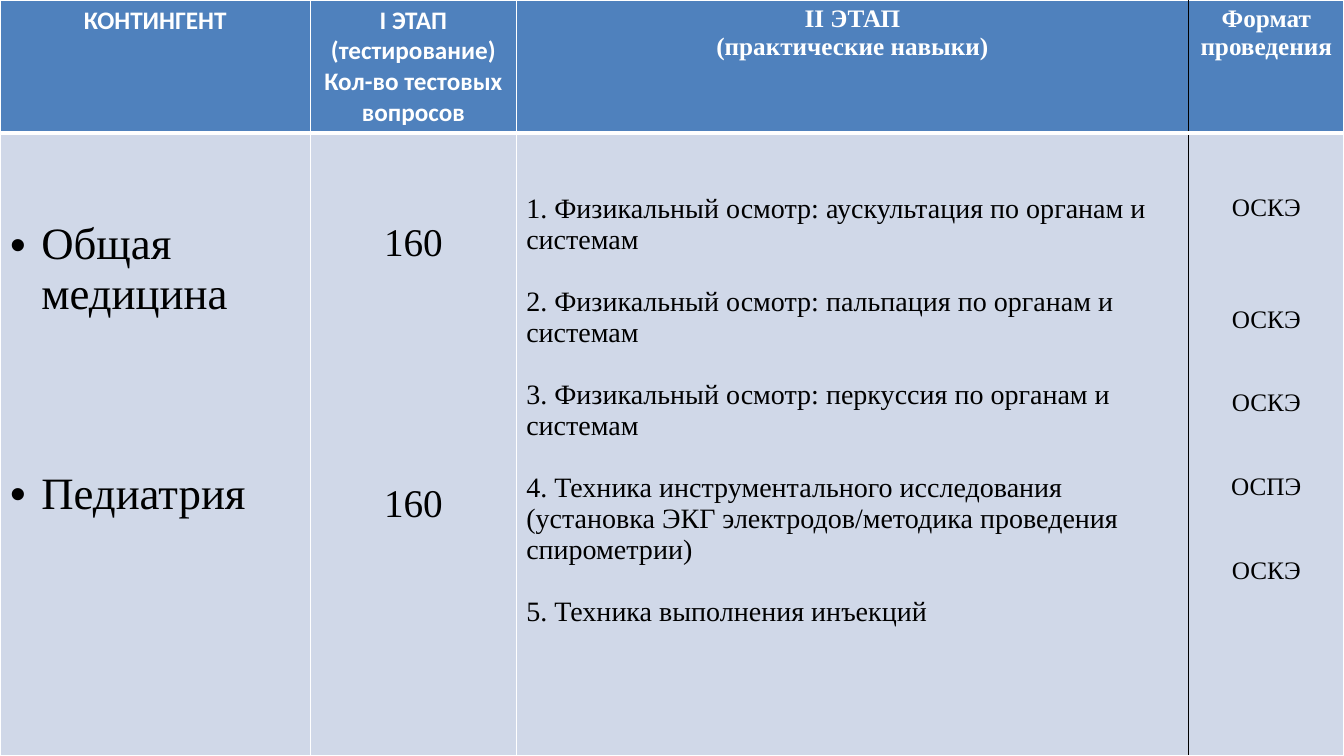
import pptx
import pptx.dml.color
import pptx.enum.text
import pptx.oxml
import pptx.oxml.ns
import pptx.util

Inches, Pt = pptx.util.Inches, pptx.util.Pt
RGBColor = pptx.dml.color.RGBColor
ALIGN = pptx.enum.text.PP_ALIGN

WHITE = RGBColor(0xFF, 0xFF, 0xFF)
BLACK = RGBColor(0x00, 0x00, 0x00)
BLUE = RGBColor(0x4F, 0x81, 0xBD)
PALE = RGBColor(0xD0, 0xD8, 0xE8)
SERIF, SANS = "Times New Roman", "Calibri"

# Content: header lines with their font
HEADERS = [
    (SANS, ["КОНТИНГЕНТ"]),
    (SANS, ["I ЭТАП", "(тестирование)", "Кол-во тестовых вопросов"]),
    (SERIF, ["II ЭТАП", "(практические навыки)"]),
    (SERIF, ["Формат проведения"]),
]

# Content: body columns; each line is (text, points of space before)
BODY = [
    {"size": 32, "top": 0.86, "align": ALIGN.LEFT, "bullet": True,
     "lines": [("Общая медицина", 0), ("Педиатрия", 107)]},
    {"size": 28, "top": 0.88, "align": ALIGN.CENTER, "bullet": False,
     "lines": [("160", 0), ("160", 155)]},
    {"size": 20, "top": 0.6, "align": ALIGN.LEFT, "bullet": False,
     "lines": [
         ("1. Физикальный осмотр: аускультация по органам и системам", 0),
         ("2. Физикальный осмотр: пальпация по органам и системам", 22),
         ("3. Физикальный осмотр: перкуссия по органам и системам", 22),
         ("4. Техника инструментального исследования (установка ЭКГ "
          "электродов/методика проведения спирометрии)", 22),
         ("5. Техника выполнения инъекций", 22)]},
    {"size": 18, "top": 0.6, "align": ALIGN.CENTER, "bullet": False,
     "lines": [("ОСКЭ", 0), ("ОСКЭ", 60), ("ОСКЭ", 40), ("ОСПЭ", 40), ("ОСКЭ", 40)]},
]

COLUMN_WIDTHS = [3.08, 2.04, 6.67, 1.54]
ROW_HEIGHTS = [1.32, 6.18]
BULLET_INDENT = 0.31


def add_border(cell, side, color, points):
    properties = cell._tc.get_or_add_tcPr()
    properties.append(pptx.oxml.parse_xml(
        f'<a:ln{side} {pptx.oxml.ns.nsdecls("a")} w="{Pt(points)}">'
        f'<a:solidFill><a:srgbClr val="{color}"/></a:solidFill></a:ln{side}>'))


def style_cell(cell, row, column, fill):
    # The line before the last column is black, the line under the header thick
    add_border(cell, "L", BLACK if column == 3 else WHITE, 1)
    add_border(cell, "R", BLACK if column == 2 else WHITE, 1)
    add_border(cell, "T", WHITE, 3 if row == 1 else 1)
    add_border(cell, "B", WHITE, 3 if row == 0 else 1)
    cell.fill.solid()
    cell.fill.fore_color.rgb = fill


def add_bullet(para):
    properties = para._p.get_or_add_pPr()
    properties.set("marL", str(Inches(BULLET_INDENT)))
    properties.set("indent", str(-Inches(BULLET_INDENT)))
    for markup in ('<a:buFont {} typeface="Arial"/>', '<a:buChar {} char="•"/>'):
        properties.append(pptx.oxml.parse_xml(markup.format(pptx.oxml.ns.nsdecls("a"))))


def write_lines(cell, lines, font, size, color, bold, align, bullet=False):
    frame = cell.text_frame
    for number, (text, space) in enumerate(lines):
        para = frame.add_paragraph() if number else frame.paragraphs[0]
        para.alignment = align
        para.space_before = Pt(space)
        if bullet:
            add_bullet(para)
        span = para.add_run()
        span.text = text
        span.font.name = font
        span.font.size = Pt(size)
        span.font.bold = bold
        span.font.color.rgb = color


# Slide
deck = pptx.Presentation()
deck.slide_width, deck.slide_height = Inches(13.33), Inches(7.5)
page = deck.slides.add_slide(deck.slide_layouts[6])

# Table grid
table = page.shapes.add_table(
    len(ROW_HEIGHTS), len(COLUMN_WIDTHS), 0, 0,
    Inches(sum(COLUMN_WIDTHS)), Inches(sum(ROW_HEIGHTS))).table
table.first_row = table.horz_banding = False
for column, width in zip(table.columns, COLUMN_WIDTHS):
    column.width = Inches(width)
for row, height in zip(table.rows, ROW_HEIGHTS):
    row.height = Inches(height)

# Header row
for index, (font, texts) in enumerate(HEADERS):
    cell = table.cell(0, index)
    style_cell(cell, 0, index, BLUE)
    write_lines(cell, [(text, 0) for text in texts], font, 18, WHITE, True, ALIGN.CENTER)

# Body row
for index, entry in enumerate(BODY):
    cell = table.cell(1, index)
    style_cell(cell, 1, index, PALE)
    cell.margin_top = Inches(entry["top"])
    write_lines(cell, entry["lines"], SERIF, entry["size"], BLACK, False,
                entry["align"], entry["bullet"])

deck.save("out.pptx")
